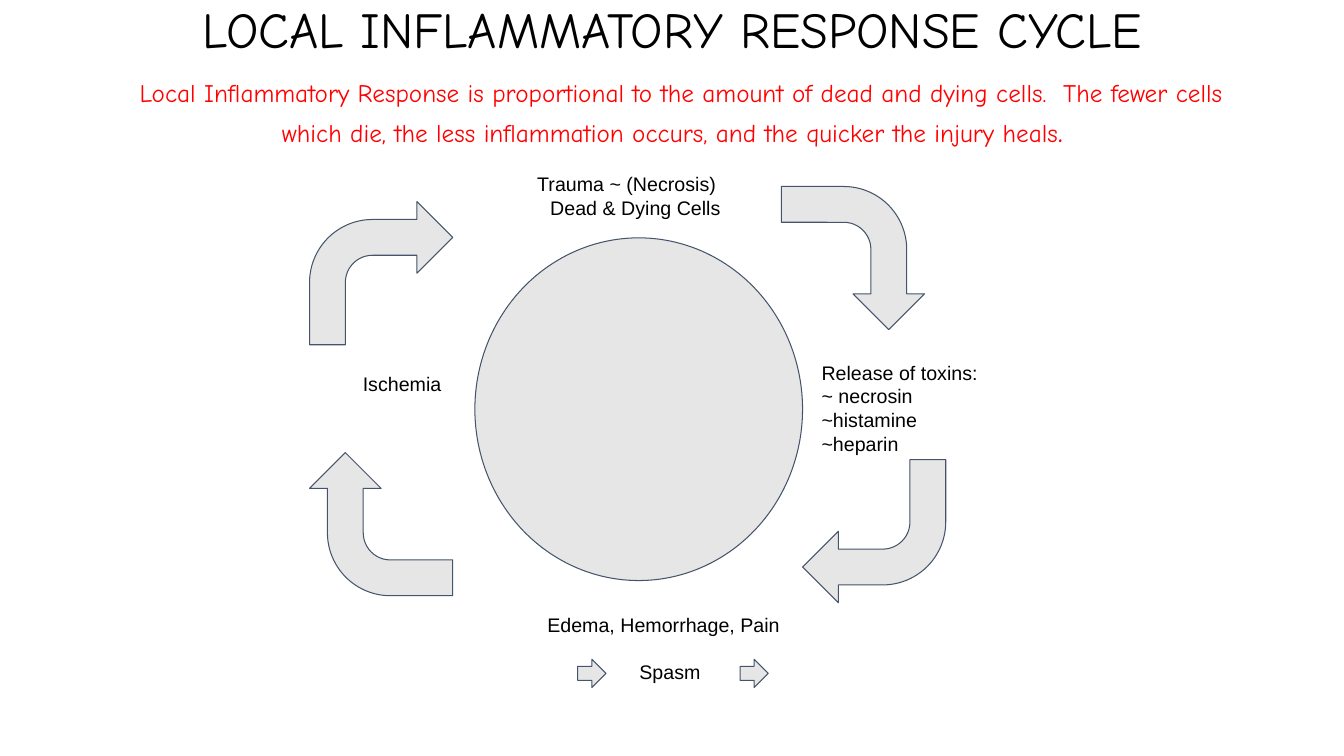
from pptx import Presentation
from pptx.dml.color import RGBColor
from pptx.enum.shapes import MSO_SHAPE as Preset
from pptx.enum.text import MSO_ANCHOR as Anchor, MSO_AUTO_SIZE as AutoSize, PP_ALIGN as Align
from pptx.util import Inches, Pt


def color(hex_string):
    return RGBColor.from_string(hex_string)


def add_outlined(preset, left, top, width, height):
    shape = page.shapes.add_shape(preset, *map(Inches, (left, top, width, height)))
    shape.shadow.inherit = False
    shape.fill.solid()
    shape.fill.fore_color.rgb = color("E7E6E6")
    shape.line.color.rgb = color("44546A")
    shape.line.width = Pt(0.75)
    return shape


deck = Presentation()
deck.slide_width, deck.slide_height = Inches(13.33), Inches(7.5)
page = deck.slides.add_slide(deck.slide_layouts[5])

# Heading with its explanation
title = page.shapes.title
title.left, title.top, title.width, title.height = map(Inches, (0.92, 0.13, 11.5, 1.28))
frame = title.text_frame
frame.word_wrap = True
frame.auto_size = AutoSize.NONE
frame.vertical_anchor = Anchor.MIDDLE
heading_lines = [
    [("LOCAL INFLAMMATORY RESPONSE CYCLE", 36, "000000")],
    [
        (" ", 36, "000000"),
        ("Local Inflammatory Response is proportional to the amount of dead and dying cells.  "
         "The fewer cells which die, the less inflammation occurs, and the quicker the injury heals",
         18, "FF0000"),
        (".", 24, "FF0000"),
    ],
]
for index, spans in enumerate(heading_lines):
    para = frame.add_paragraph() if index else frame.paragraphs[0]
    para.alignment = Align.CENTER
    para.line_spacing = 0.9
    para.font.name = "Comic Neue"
    for text, size, shade in spans:
        span = para.add_run()
        span.text = text
        span.font.name = "Comic Neue"
        span.font.size = Pt(size)
        span.font.color.rgb = color(shade)

# Cycle: circle, bent arrows around it, small arrows beside the spasm
add_outlined(Preset.OVAL, 4.71, 2.36, 3.25, 3.4)
for left, top, turn in [(3.07, 2, 0), (7.75, 1.85, 90), (7.96, 4.56, 180), (3.07, 4.49, 270)]:
    arrow = add_outlined(Preset.BENT_ARROW, left, top, 1.42, 1.42)
    arrow.rotation = turn
    arrow.adjustments[3] = 0.44
for left in (5.73, 7.34):
    add_outlined(Preset.RIGHT_ARROW, left, 6.54, 0.28, 0.28)

# Stages: place, then lines as (text, alignment, space before)
stages = [
    ((5.23, 1.61, 2.2, 0.62),
     [("Trauma ~ (Necrosis)", Align.LEFT, 0), ("Dead & Dying Cells ", Align.CENTER, 0)]),
    ((8.05, 3.48, 3.66, 1.45),
     [(text, Align.LEFT, 0)
      for text in ("Release of toxins:", "~ necrosin", "~histamine", "~heparin")]),
    ((5.33, 5.98, 2.63, 1.02),
     [("Edema, Hemorrhage, Pain", Align.LEFT, 0), ("Spasm", Align.CENTER, 17)]),
    ((3.5, 3.59, 1.21, 0.38), [("Ischemia", Align.LEFT, 0)]),
]
for place, lines in stages:
    frame = page.shapes.add_textbox(*map(Inches, place)).text_frame
    frame.word_wrap = True
    frame.margin_left = frame.margin_right = Inches(0.1)
    frame.margin_top = frame.margin_bottom = Inches(0.1)
    for index, (text, alignment, gap) in enumerate(lines):
        para = frame.add_paragraph() if index else frame.paragraphs[0]
        para.text = text
        para.alignment = alignment
        para.space_before = Pt(gap)
        para.font.name = "Arial"
        para.font.size = Pt(14)
        para.font.color.rgb = color("000000")

deck.save("out.pptx")
